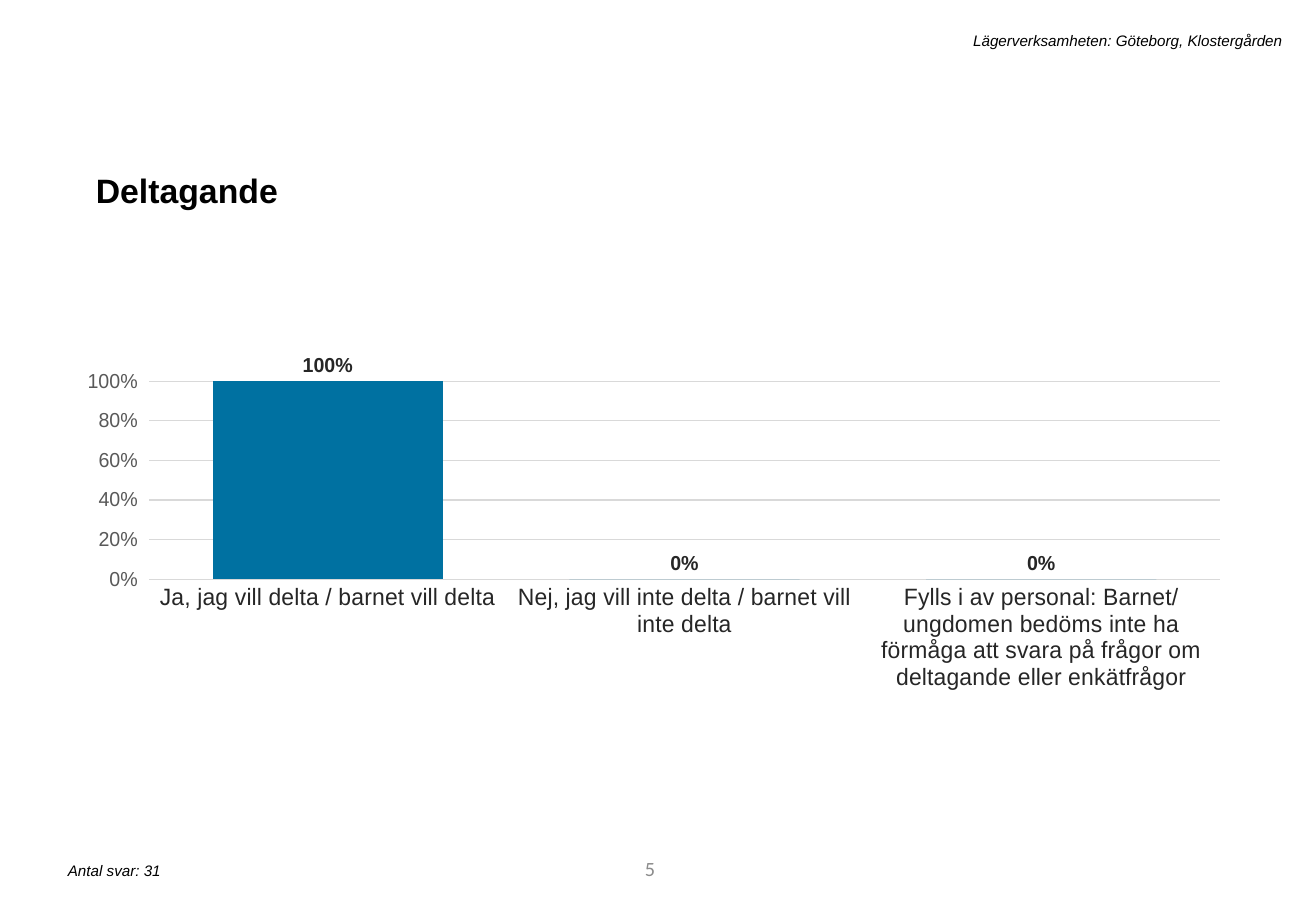
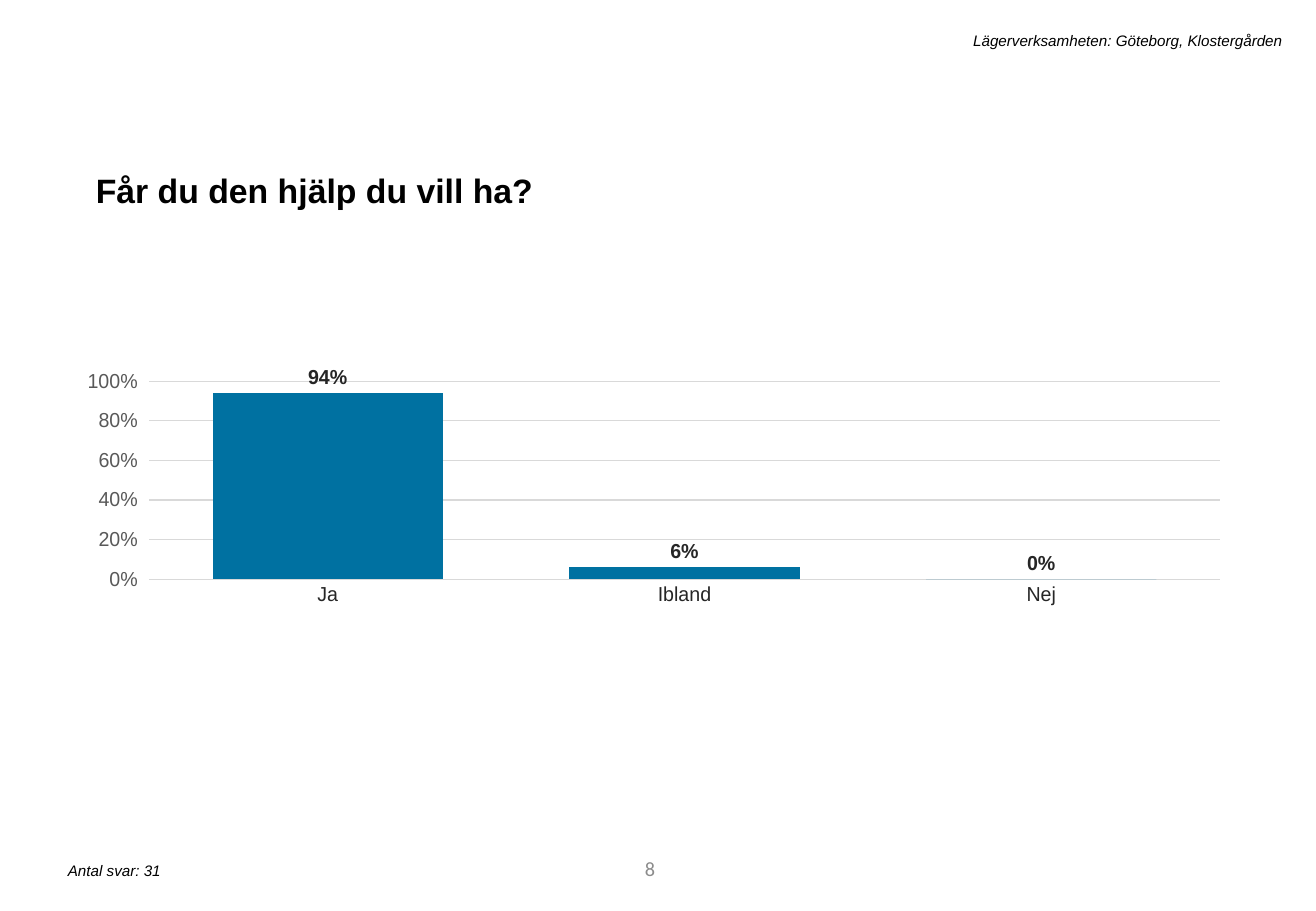
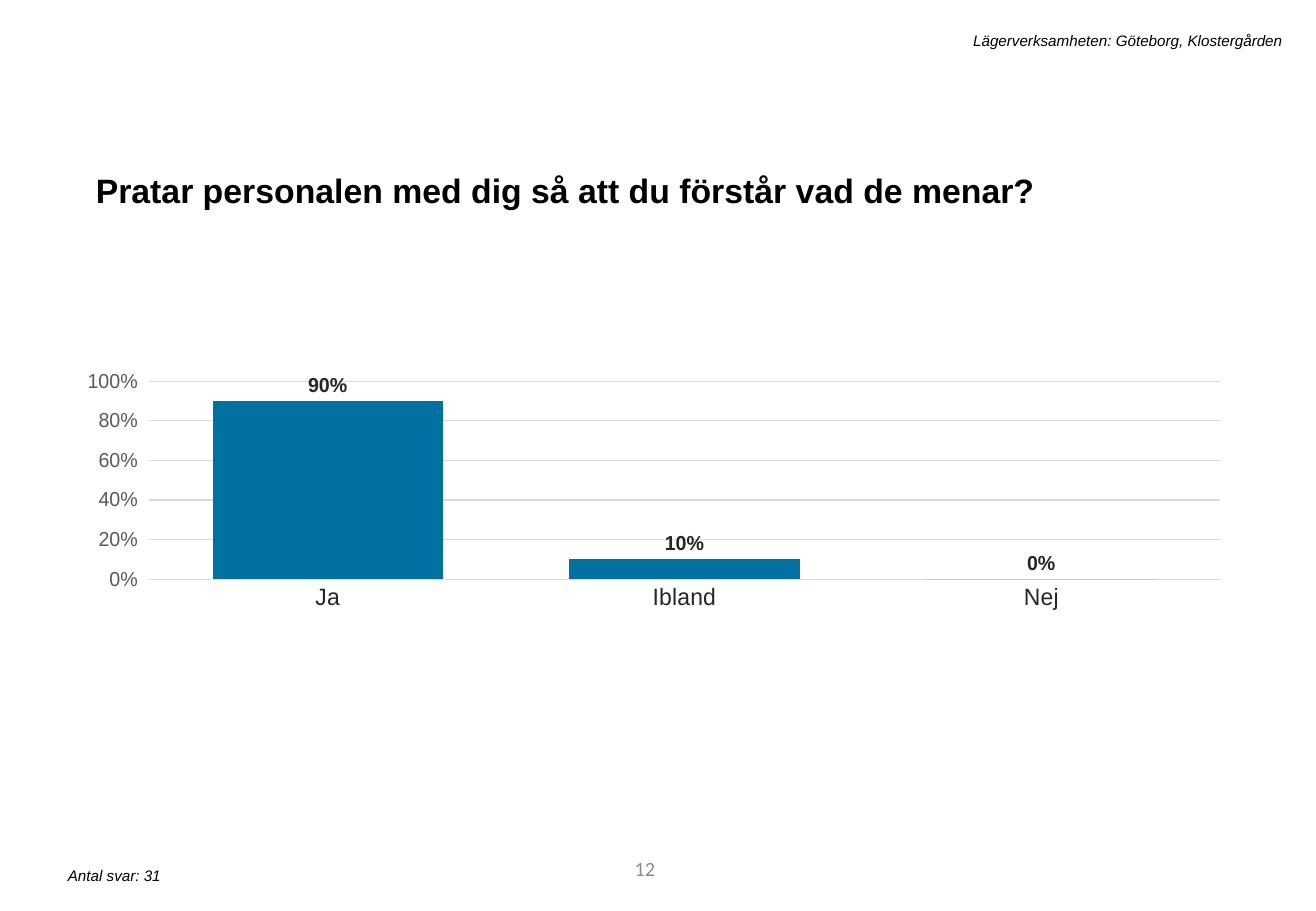
from pptx import Presentation
from pptx.chart.data import CategoryChartData
from pptx.dml.color import RGBColor
from pptx.enum.chart import XL_CHART_TYPE, XL_LABEL_POSITION, XL_TICK_MARK
from pptx.enum.text import MSO_ANCHOR, MSO_AUTO_SIZE, PP_ALIGN
from pptx.oxml import parse_xml
from pptx.oxml.ns import nsdecls
from pptx.util import Inches, Pt

COLORS = {
    "text": "000000",
    "label": "262626",
    "axis": "595959",
    "grid": "D9D9D9",
    "bar": "0071A1",
    "number": "8C8C8C",
}
UNIT = "Lägerverksamheten: Göteborg, Klostergården"
ANSWERS = "Antal svar: 31"
YES_NO = ["Ja", "Ibland", "Nej"]
PARTICIPATION = [
    "Ja, jag vill delta / barnet vill delta",
    "Nej, jag vill inte delta / barnet vill inte delta",
    "Fylls i av personal: Barnet/ungdomen bedöms inte ha förmåga "
    "att svara på frågor om deltagande eller enkätfrågor",
]
PLOT_LAYOUT = {"x": 0.025, "y": 0.154, "w": 0.966, "h": 0.413}


class Deck:
    def __init__(self):
        self.prs = Presentation()
        self.prs.slide_width = Inches(10.83)
        self.prs.slide_height = Inches(7.5)
        self.s = None

    def slide(self, number, title, answers_top):
        self.s = self.prs.slides.add_slide(self.prs.slide_layouts[6])
        tf = self.text(str(number), (3.05, 6.95, 2.44, 0.4), 12, "number",
                       font="Calibri", align=PP_ALIGN.RIGHT)
        tf.auto_size = MSO_AUTO_SIZE.NONE
        tf.vertical_anchor = MSO_ANCHOR.MIDDLE
        p = self.text(title, (0.69, 1.28, 9.4, 0.47), 20, bold=True).paragraphs[0]
        p.line_spacing = 1.2
        p.space_before = Pt(10)
        self.text(ANSWERS, (0.46, answers_top, 4.41, 0.25), 9, italic=True)
        self.text(UNIT, (1.79, 0.21, 8.86, 0.25), 9, italic=True, align=PP_ALIGN.RIGHT)

    def font(self, font, size, color, name="Arial", bold=False, italic=False):
        font.name = name
        font.size = Pt(size)
        font.bold = bold
        font.italic = italic
        font.color.rgb = RGBColor.from_string(COLORS[color])

    def text(self, text, box, size, color="text", font="Arial", bold=False,
             italic=False, align=PP_ALIGN.LEFT):
        tf = self.s.shapes.add_textbox(*map(Inches, box)).text_frame
        tf.word_wrap = True
        tf.auto_size = MSO_AUTO_SIZE.SHAPE_TO_FIT_TEXT
        p = tf.paragraphs[0]
        p.text = text
        p.alignment = align
        self.font(p.runs[0].font, size, color, font, bold, italic)
        return tf

    def grid_line(self, line):
        line.color.rgb = RGBColor.from_string(COLORS["grid"])
        line.width = Pt(0.75)

    def chart(self, categories, values, category_size):
        data = CategoryChartData(number_format="0%")
        data.categories = categories
        data.add_series("Series 1", values)
        box = map(Inches, (0.72, 2.53, 9.4, 3.95))
        chart = self.s.shapes.add_chart(XL_CHART_TYPE.COLUMN_CLUSTERED, *box, data).chart
        chart.has_title = False
        chart.has_legend = False
        self.font(chart.font, 10, "text")
        self.axes(chart, category_size)
        self.bars(chart.plots[0])
        self.plot_area(chart)

    def axes(self, chart, category_size):
        axis = chart.category_axis
        axis.major_tick_mark = axis.minor_tick_mark = XL_TICK_MARK.NONE
        self.grid_line(axis.format.line)
        self.font(axis.tick_labels.font, category_size, "label")
        axis = chart.value_axis
        axis.minimum_scale, axis.maximum_scale, axis.major_unit = 0, 1, 0.2
        axis.major_tick_mark = XL_TICK_MARK.OUTSIDE
        axis.minor_tick_mark = XL_TICK_MARK.NONE
        axis.format.line.fill.background()
        self.grid_line(axis.major_gridlines.format.line)
        axis.tick_labels.number_format = "0%"
        axis.tick_labels.number_format_is_linked = False
        self.font(axis.tick_labels.font, 12, "axis")

    def bars(self, plot):
        plot.gap_width = 55
        plot.vary_by_categories = False
        fill = plot.series[0].format.fill
        fill.solid()
        fill.fore_color.rgb = RGBColor.from_string(COLORS["bar"])
        labels = plot.series[0].data_labels
        labels.show_value = True
        labels.position = XL_LABEL_POSITION.OUTSIDE_END
        labels.number_format = "0%"
        labels.number_format_is_linked = False
        self.font(labels.font, 12, "label", bold=True)

    def plot_area(self, chart):
        area = chart.element.xpath(".//c:plotArea")[0]
        for layout in area.xpath("c:layout"):
            area.remove(layout)
        modes = "".join(f'<c:{k}Mode val="edge"/>' for k in "xy")
        sizes = "".join(f'<c:{k} val="{v}"/>' for k, v in PLOT_LAYOUT.items())
        area.insert(0, parse_xml(
            f'<c:layout {nsdecls("c")}><c:manualLayout><c:layoutTarget val="inner"/>'
            f"{modes}{sizes}</c:manualLayout></c:layout>"))


def main():
    deck = Deck()
    questions = [
        (5, "Deltagande", 7.04, PARTICIPATION, (1, 0, 0), 14),
        (8, "Får du den hjälp du vill ha?", 7.04, YES_NO, (0.94, 0.06, 0), 12),
        (12, "Pratar personalen med dig så att du förstår vad de menar?", 7.08,
         YES_NO, (0.9, 0.1, 0), 14),
    ]
    for number, title, answers_top, categories, values, category_size in questions:
        deck.slide(number, title, answers_top)
        deck.chart(categories, values, category_size)
    deck.prs.save("out.pptx")


if __name__ == "__main__":
    main()
